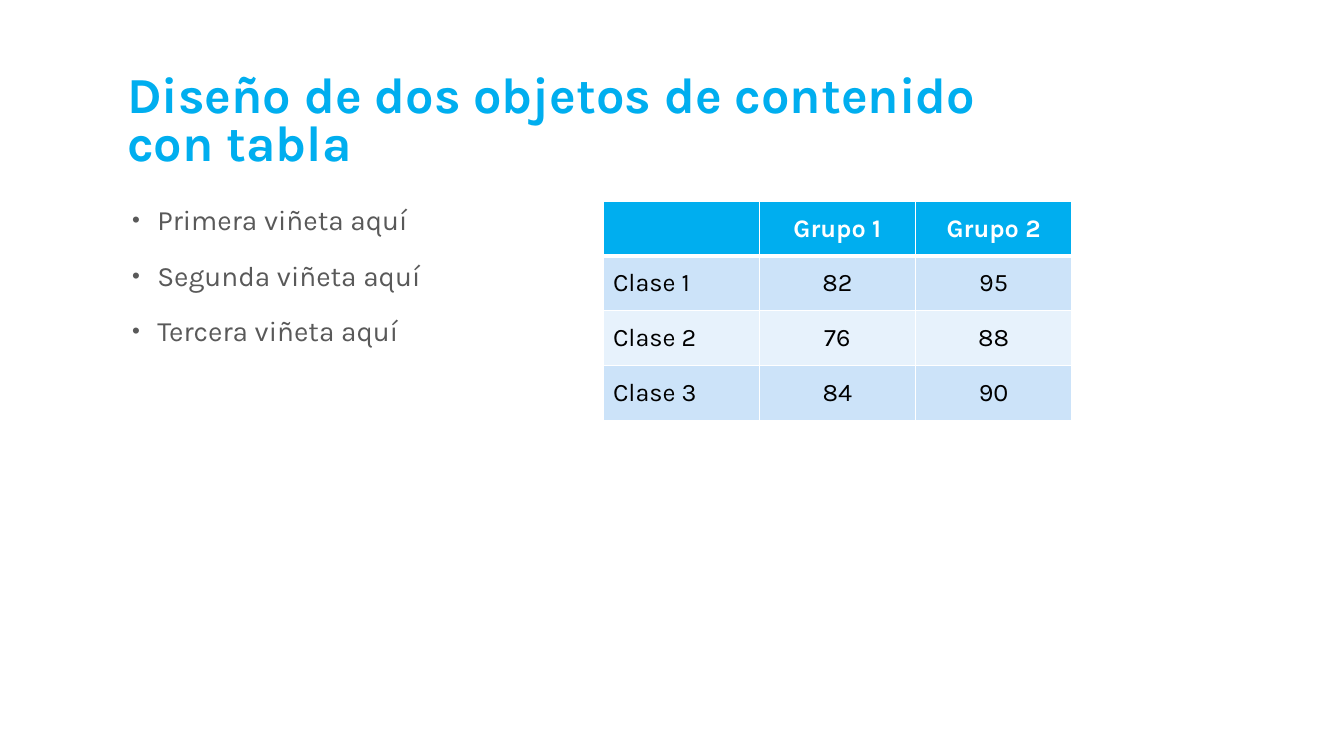
from lxml import etree
from pptx import Presentation
from pptx.dml.color import RGBColor
from pptx.enum.text import MSO_ANCHOR, MSO_AUTO_SIZE, PP_ALIGN
from pptx.oxml.ns import qn
from pptx.util import Inches, Pt

TITLE = "Diseño de dos objetos de contenido con tabla"
ITEMS = ["Primera viñeta aquí", "Segunda viñeta aquí", "Tercera viñeta aquí"]
ROWS = [
    ("", "Grupo 1", "Grupo 2"),
    ("Clase 1", "82", "95"),
    ("Clase 2", "76", "88"),
    ("Clase 3", "84", "90"),
]
HUES = {"blue": "00AEEF", "gray": "595959", "white": "FFFFFF",
        "black": "000000", "dark": "CCE3F9", "light": "E7F2FC"}
FONT = "Karla"
WIDE, HIGH = 13.33, 7.5
LEFT, TOP, COL, GAP = 1.16, 2, 4.65, 0.17
ROW = 0.5425
MID, BASE = MSO_ANCHOR.MIDDLE, MSO_ANCHOR.BOTTOM
START, CENTER = PP_ALIGN.LEFT, PP_ALIGN.CENTER
FIXED = MSO_AUTO_SIZE.NONE


def place(shape, left, top, width, height):
    shape.left, shape.top = Inches(left), Inches(top)
    shape.width, shape.height = Inches(width), Inches(height)
    shape.text_frame.auto_size = FIXED
    shape.text_frame.word_wrap = True


def write(para, text, size, hue, bold=False):
    run = para.add_run()
    run.text = text
    font = run.font
    font.name, font.size, font.bold = FONT, Pt(size), bold
    font.color.rgb = RGBColor.from_string(HUES[hue])


def tint(node, hue):
    etree.SubElement(node, qn("a:srgbClr"), val=HUES[hue])


def bullet(para):
    props = para._p.get_or_add_pPr()
    props.set("marL", str(Inches(0.3)))
    props.set("indent", str(Inches(-0.25)))
    tint(etree.SubElement(props, qn("a:buClr")), "gray")
    etree.SubElement(props, qn("a:buSzPct"), val="80000")
    etree.SubElement(props, qn("a:buFont"), typeface="Arial")
    etree.SubElement(props, qn("a:buChar"), char="•")


def border(cell, row):
    props = cell._tc.get_or_add_tcPr()
    thick = {0: "B", 1: "T"}.get(row)
    for side in "LRTB":
        width = Pt(3 if side == thick else 1)
        line = etree.SubElement(props, qn("a:ln" + side), w=str(width))
        tint(etree.SubElement(line, qn("a:solidFill")), "white")


deck = Presentation()
deck.slide_width, deck.slide_height = Inches(WIDE), Inches(HIGH)
slide = deck.slides.add_slide(deck.slide_layouts[1])

title = slide.shapes.title
place(title, LEFT, 0.58, 2 * COL + 0.2, 1.17)
title.text_frame.vertical_anchor = BASE
para = title.text_frame.paragraphs[0]
para.alignment, para.line_spacing = START, 0.8
write(para, TITLE, 36, "blue", True)

body = slide.placeholders[1]
place(body, LEFT, TOP, COL, 4.58)
for i, item in enumerate(ITEMS):
    para = body.text_frame.add_paragraph() if i else body.text_frame.paragraphs[0]
    bullet(para)
    para.line_spacing, para.space_before = 0.9, Pt(18 if i else 0)
    write(para, item, 20, "gray")

grid = slide.shapes.add_table(
    len(ROWS), len(ROWS[0]), Inches(LEFT + COL + GAP), Inches(TOP),
    Inches(COL), Inches(ROW * len(ROWS))).table
for r, row in enumerate(ROWS):
    fill = "blue" if r == 0 else "dark" if r % 2 else "light"
    for c, text in enumerate(row):
        cell = grid.cell(r, c)
        border(cell, r)
        cell.fill.solid()
        cell.fill.fore_color.rgb = RGBColor.from_string(HUES[fill])
        cell.vertical_anchor = MID
        if text:
            para = cell.text_frame.paragraphs[0]
            para.alignment = CENTER if c else START
            write(para, text, 18, "black" if r else "white", r == 0)

deck.save("out.pptx")
